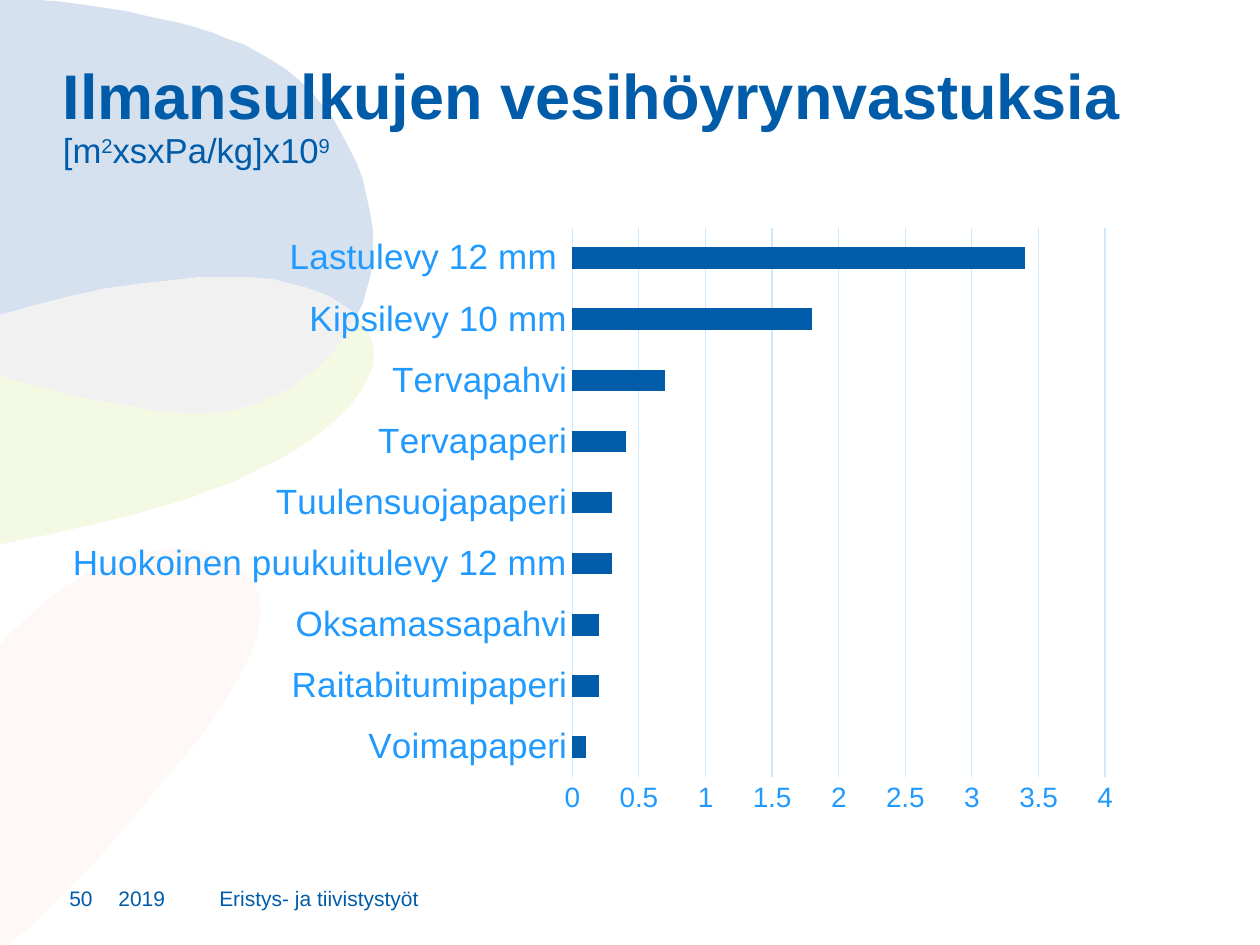
from pptx import Presentation
from pptx.chart.data import CategoryChartData
from pptx.dml.color import RGBColor
from pptx.enum.chart import XL_CHART_TYPE, XL_TICK_MARK
from pptx.enum.text import MSO_ANCHOR
from pptx.oxml import parse_xml
from pptx.oxml.ns import nsdecls
from pptx.util import Inches, Pt

BAR = XL_CHART_TYPE.BAR_CLUSTERED
NO_TICK = XL_TICK_MARK.NONE
TOP, BOTTOM = MSO_ANCHOR.TOP, MSO_ANCHOR.BOTTOM
BLUE, LABEL, GRID = "005CA8", "219AFF", "CCE8FF"


def color(value):
    return RGBColor.from_string(value)


def add_text(s, box, anchor, runs):
    tf = s.shapes.add_textbox(*[Inches(v) for v in box]).text_frame
    margins = dict.fromkeys(("margin_left", "margin_top", "margin_right", "margin_bottom"), 0)
    for name, value in {**margins, "word_wrap": True, "vertical_anchor": anchor}.items():
        setattr(tf, name, value)
    p = tf.paragraphs[0]
    for text, size, bold, raised in runs:
        r = p.add_run()
        r.text = text
        for name, value in {"name": "Arial", "size": Pt(size), "bold": bold}.items():
            setattr(r.font, name, value)
        r.font.color.rgb = color(BLUE)
        if raised:
            r._r.get_or_add_rPr().set("baseline", "30000")
    return p


prs = Presentation()
prs.slide_width, prs.slide_height = Inches(10), Inches(7.5)
s = prs.slides.add_slide(prs.slide_layouts[6])

grey_top = [
    (0, 2.5), (0.29, 2.42), (0.56, 2.35), (0.84, 2.29), (1.13, 2.25), (1.41, 2.22),
    (1.6, 2.2), (1.78, 2.2), (1.98, 2.2), (2.18, 2.22), (2.3, 2.25), (2.42, 2.28),
    (2.53, 2.32), (2.63, 2.36), (2.72, 2.42), (2.78, 2.46), (2.83, 2.51),
]
grey_bottom = [
    (2.83, 2.51), (2.78, 2.6), (2.73, 2.68), (2.68, 2.75), (2.61, 2.82), (2.53, 2.91),
    (2.44, 2.98), (2.36, 3.04), (2.28, 3.09), (2.19, 3.13), (2.11, 3.17), (2.02, 3.21),
    (1.93, 3.23), (1.84, 3.26), (1.74, 3.27), (1.65, 3.28), (1.5, 3.28), (1.38, 3.27),
    (1.24, 3.26), (1.08, 3.23), (0.91, 3.2), (0.73, 3.17), (0.53, 3.13), (0.33, 3.07),
    (0.11, 3.02), (0, 2.98),
]
blue_edge = [
    (2.88, 2.41), (2.91, 2.3), (2.94, 2.19), (2.96, 2.07), (2.96, 1.83), (2.94, 1.7),
    (2.91, 1.56), (2.88, 1.42), (2.83, 1.29), (2.77, 1.17), (2.71, 1.06), (2.65, 0.95),
    (2.58, 0.86), (2.48, 0.74), (2.38, 0.64), (2.27, 0.55), (2.16, 0.48), (2.04, 0.41),
    (1.93, 0.35), (1.81, 0.31), (1.69, 0.26), (1.53, 0.21), (1.42, 0.18), (1.22, 0.14),
    (1.01, 0.09), (0.82, 0.06), (0.61, 0.03), (0.46, 0.01), (0.3, 0), (0, 0),
]
green_edge = [
    (0, 4.32), (0.4, 4.24), (0.75, 4.16), (1.04, 4.09), (1.28, 4.02), (1.49, 3.96),
    (1.64, 3.9), (1.84, 3.83), (2.02, 3.74), (2.19, 3.66), (2.35, 3.57), (2.49, 3.47),
    (2.61, 3.38), (2.7, 3.3), (2.77, 3.23), (2.83, 3.15), (2.88, 3.08), (2.92, 3),
    (2.95, 2.93), (2.96, 2.88), (2.97, 2.81), (2.96, 2.74), (2.94, 2.67), (2.91, 2.62),
    (2.87, 2.55),
]
peach = [
    (1.39, 4.35), (1.27, 4.36), (1.15, 4.38), (1.02, 4.41), (0.89, 4.45), (0.76, 4.51),
    (0.63, 4.59), (0.49, 4.67), (0.36, 4.77), (0.23, 4.89), (0.09, 5.02), (0, 5.12),
    (0, 7.5), (0.06, 7.5), (0.17, 7.41), (0.27, 7.33), (0.39, 7.21), (0.58, 7.02),
    (0.79, 6.8), (1, 6.56), (1.2, 6.32), (1.39, 6.09), (1.56, 5.89), (1.69, 5.71),
    (1.78, 5.58), (1.86, 5.44), (1.94, 5.3), (2, 5.16), (2.05, 5.03), (2.07, 4.9),
    (2.07, 4.81), (2.06, 4.73), (2.03, 4.66), (1.99, 4.59), (1.94, 4.54), (1.87, 4.48),
    (1.8, 4.44), (1.72, 4.41), (1.63, 4.38), (1.52, 4.36),
]
petals = [
    (peach, "FEF9F7"),
    (grey_bottom + green_edge, "F3F9E3"),
    (grey_top + blue_edge, "D6E1F0"),
    (grey_top + grey_bottom[1:], "F1F1F1"),
]
for points, fill in petals:
    corners = [(Inches(x), Inches(y)) for x, y in points]
    outline = s.shapes.build_freeform(*corners[0])
    outline.add_line_segments(corners[1:], close=True)
    sp = outline.convert_to_shape()
    sp.shadow.inherit = False
    sp.fill.solid()
    sp.fill.fore_color.rgb = color(fill)
    sp.line.fill.background()

for left, width, text in [
    (0.94, 0.7, "2019"),
    (1.74, 4.02, "Eristys- ja tiivistystyöt"),
    (0.55, 0.39, "50"),
]:
    add_text(s, (left, 7.07, width, 0.16), BOTTOM, [(text, 12, False, False)])

resistances = {
    "Voimapaperi": 0.1,
    "Raitabitumipaperi": 0.2,
    "Oksamassapahvi": 0.2,
    "Huokoinen puukuitulevy 12 mm": 0.3,
    "Tuulensuojapaperi": 0.3,
    "Tervapaperi": 0.4,
    "Tervapahvi": 0.7,
    "Kipsilevy 10 mm": 1.8,
    "Lastulevy 12 mm ": 3.4,
}
data = CategoryChartData()
data.categories = list(resistances)
data.add_series("Series 1", list(resistances.values()))
box = [Inches(v) for v in (0.4, 1.71, 8.63, 4.85)]
chart = s.shapes.add_chart(BAR, *box, data).chart
chart.has_legend = False
chart.has_title = False
chart.font.name = "Arial"
chart.font.size = Pt(10)
chart.font.color.rgb = color(BLUE)

plot = chart.plots[0]
plot.gap_width = 182
plot.vary_by_categories = False
bars = plot.series[0].format.fill
bars.solid()
bars.fore_color.rgb = color(BLUE)

cat, val = chart.category_axis, chart.value_axis
for axis, size in ((cat, 20), (val, 16)):
    axis.major_tick_mark = axis.minor_tick_mark = NO_TICK
    font = axis.tick_labels.font
    font.name, font.size = "Arial", Pt(size)
    font.color.rgb = color(LABEL)
cat.has_major_gridlines = False
for name, value in {"minimum_scale": 0, "maximum_scale": 4, "major_unit": 0.5,
                    "has_major_gridlines": True}.items():
    setattr(val, name, value)
val.format.line.fill.background()
for line in (cat.format.line, val.major_gridlines.format.line):
    line.color.rgb = color(GRID)
    line.width = Pt(0.75)

layout = {"x": 0.48, "y": 0.02, "w": 0.49, "h": 0.9}
modes = "".join(f'<c:{k}Mode val="edge"/>' for k in "xy")
sizes = "".join(f'<c:{k} val="{v}"/>' for k, v in layout.items())
area = chart._chartSpace.chart.plotArea
for old in area.findall("{*}layout"):
    area.remove(old)
area.insert(0, parse_xml(
    f'<c:layout {nsdecls("c")}><c:manualLayout><c:layoutTarget val="inner"/>'
    f'{modes}{sizes}</c:manualLayout></c:layout>'))

p = add_text(s, (0.5, 0.52, 9, 0.69), TOP, [
    ("Ilmansulkujen vesihöyrynvastuksia ", 36, True, False),
    ("[m", 19.8, False, False),
    ("2", 19.8, False, True),
    ("xsxPa/kg]x10", 19.8, False, False),
    ("9", 19.8, False, True),
])
p.line_spacing = 0.9

prs.save("out.pptx")
